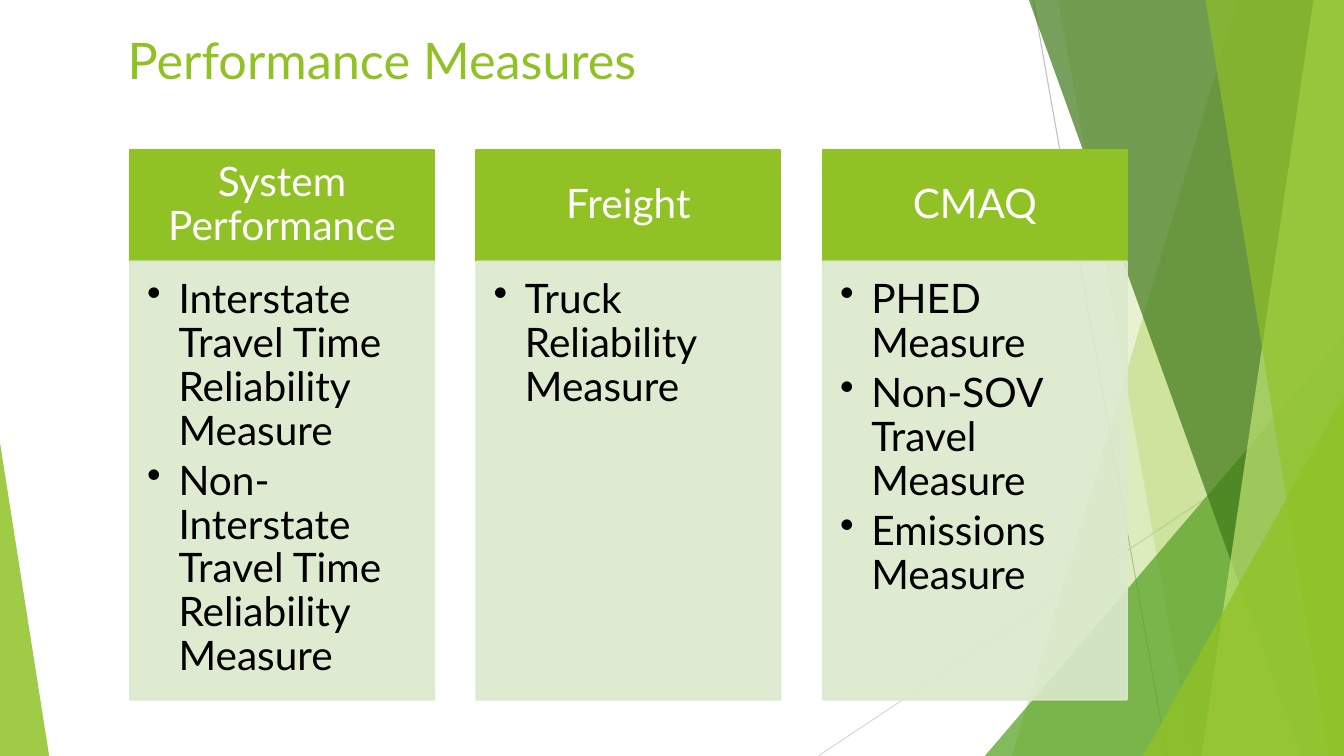
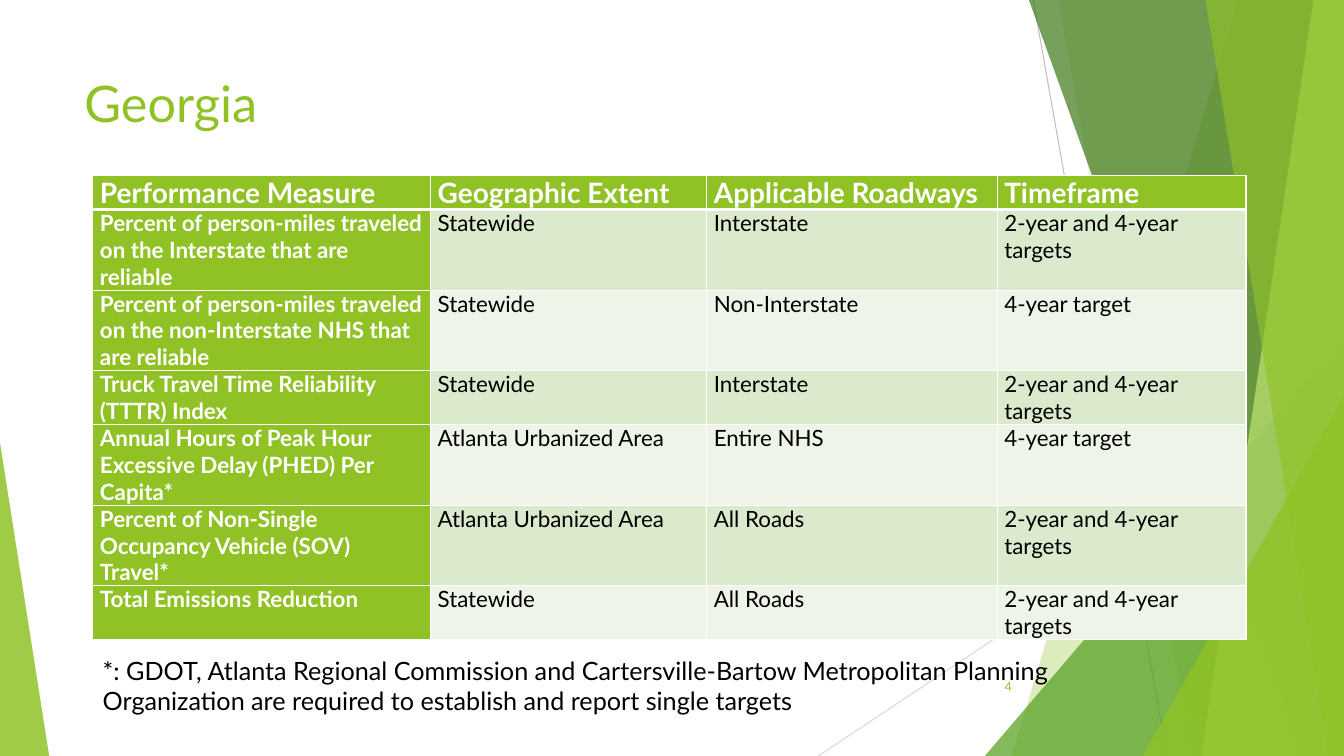
import lxml.etree
import pptx
import pptx.dml.color
import pptx.enum.shapes
import pptx.enum.text
import pptx.oxml
import pptx.oxml.ns
import pptx.util

Cm = pptx.util.Cm
Pt = pptx.util.Pt
RGB = pptx.dml.color.RGBColor
KIND = pptx.enum.shapes.MSO_SHAPE
ANCHOR = pptx.enum.text.MSO_ANCHOR
ALIGN = pptx.enum.text.PP_ALIGN
qn = pptx.oxml.ns.qn

LIME = RGB(0x90, 0xC2, 0x26)
GREEN = RGB(0x54, 0xA0, 0x21)
DARK = RGB(0x3F, 0x78, 0x19)
LIGHT = RGB(0xC0, 0xE4, 0x74)
PALE = RGB(0xDB, 0xE9, 0xCD)
FAINT = RGB(0xEE, 0xF4, 0xE8)
GREY = RGB(0xBF, 0xBF, 0xBF)
SILVER = RGB(0xD9, 0xD9, 0xD9)
WHITE = RGB(0xFF, 0xFF, 0xFF)
BLACK = RGB(0, 0, 0)
FONT = "Lato"
WIDE, HIGH = 33.87, 19.05


def write(frame, text, size=18, color=BLACK, bold=False, align=ALIGN.LEFT,
          anchor=ANCHOR.TOP, inset=(0.25, 0.13, 0.25, 0.13), before=0,
          after=0, line=1.0, bullet=False):
    frame.word_wrap = True
    frame.vertical_anchor = anchor
    sides = ("margin_left", "margin_top", "margin_right", "margin_bottom")
    for side, gap in zip(sides, inset):
        setattr(frame, side, Cm(gap))
    frame.text = text
    for para in frame.paragraphs:
        para.alignment = align
        para.space_before = Pt(before)
        para.space_after = Pt(after)
        para.line_spacing = line
        if bullet:
            props = para._p.get_or_add_pPr()
            props.set("marL", str(Cm(0.79)))
            props.set("indent", str(-Cm(0.79)))
            lxml.etree.SubElement(props, qn("a:buChar")).set("char", "•")
        font = para.runs[0].font
        font.name = FONT
        font.size = Pt(size)
        font.bold = bold
        font.color.rgb = color


def paint(shape, color, alpha=100, edge=0):
    shape.shadow.inherit = False
    fills = [shape.fill]
    if edge:
        shape.line.width = Pt(edge)
        fills.append(shape.line.fill)
    else:
        shape.line.fill.background()
    for fill in fills:
        fill.solid()
        fill.fore_color.rgb = color
    if alpha < 100:
        for tone in shape.element.spPr.iter(qn("a:srgbClr")):
            lxml.etree.SubElement(tone, qn("a:alpha")).set("val", str(alpha * 1000))


deck = pptx.Presentation()
deck.slide_width = Cm(WIDE)
deck.slide_height = Cm(HIGH)
blank = deck.slide_layouts[6]
first = deck.slides.add_slide(blank)

for x1, y1, x2, y2, color in [
    (26.04, 0, 29.41, HIGH, GREY),
    (WIDE, 10.24, 20.62, HIGH, SILVER),
]:
    rule = first.shapes.add_connector(
        pptx.enum.shapes.MSO_CONNECTOR.STRAIGHT, Cm(x1), Cm(y1), Cm(x2), Cm(y2))
    rule.line.color.rgb = color
    rule.line.width = Pt(0.75)
    lxml.etree.SubElement(rule.element.spPr, qn("a:effectLst"))

for form, geo, color, alpha in [
    ("blade", (31.19, 25.5), LIME, 30),
    ("blade", (26.67, 30.05), LIME, 20),
    ("peak", (24.82, 8.46, 9.05, 1), GREEN, 72),
    ("blade", (25.93, 32.79), DARK, 70),
    ("blade", (33.1, 30.28), LIGHT, 70),
    ("blade", (30.38, 33.48), LIME, 65),
    ("peak", (28.8, 9.98, 5.07, 1), LIME, 80),
    ("peak", (0, 11.15, 1.24, 0), LIME, 85),
]:
    if form == "blade":
        top, foot = geo
        pen = first.shapes.build_freeform(Cm(top), 0)
        pen.add_line_segments(
            [(Cm(WIDE), 0), (Cm(WIDE), Cm(HIGH)), (Cm(foot), Cm(HIGH))])
        facet = pen.convert_to_shape()
    else:
        left, top, width, tip = geo
        facet = first.shapes.add_shape(
            KIND.ISOSCELES_TRIANGLE, Cm(left), Cm(top), Cm(width), Cm(HIGH - top))
        facet.adjustments[0] = tip
    paint(facet, color, alpha)

for shape in list(first.shapes):
    blank.shapes.element.append(shape.element)

second = deck.slides.add_slide(blank)

for slide, text, left, top in [
    (first, "Performance Measures", 2.97, 0.61),
    (second, "Georgia", 1.88, 1.7),
]:
    title = slide.shapes.add_textbox(Cm(left), Cm(top), Cm(24), Cm(3.4))
    write(title.text_frame, text, size=36, color=LIME)

cards = [
    ("System Performance", [
        "Interstate Travel Time Reliability Measure",
        "Non-Interstate Travel Time Reliability Measure"]),
    ("Freight", ["Truck Reliability Measure"]),
    ("CMAQ", ["PHED Measure", "Non-SOV Travel Measure", "Emissions Measure"]),
]
for i, (name, items) in enumerate(cards):
    left = Cm(3.28 + i * 8.73)
    head = first.shapes.add_shape(KIND.RECTANGLE, left, Cm(3.78), Cm(7.66), Cm(2.81))
    paint(head, LIME, edge=1.5)
    write(head.text_frame, name, size=29, color=WHITE, align=ALIGN.CENTER,
          anchor=ANCHOR.MIDDLE, inset=(0.58, 0.33, 0.58, 0.33), line=0.9)
    body = first.shapes.add_shape(KIND.RECTANGLE, left, Cm(6.59), Cm(7.66), Cm(11.04))
    paint(body, PALE, 90, edge=1.5)
    write(body.text_frame, "\n".join(items), size=29,
          inset=(0.43, 0.43, 0.58, 0.64), after=4.4, line=0.9, bullet=True)

number = second.shapes.add_textbox(Cm(23.85), Cm(16.79), Cm(1.9), Cm(1.02))
write(number.text_frame, "4", size=9, color=LIME, align=ALIGN.RIGHT,
      anchor=ANCHOR.MIDDLE)

rows = [
    ("Performance Measure", "Geographic Extent", "Applicable Roadways", "Timeframe"),
    ("Percent of person-miles traveled on the Interstate that are reliable",
     "Statewide", "Interstate", "2-year and 4-year targets"),
    ("Percent of person-miles traveled on the non-Interstate NHS that are reliable",
     "Statewide", "Non-Interstate", "4-year target"),
    ("Truck Travel Time Reliability (TTTR) Index",
     "Statewide", "Interstate", "2-year and 4-year targets"),
    ("Annual Hours of Peak Hour Excessive Delay (PHED) Per Capita*",
     "Atlanta Urbanized Area", "Entire NHS", "4-year target"),
    ("Percent of Non-Single Occupancy Vehicle (SOV) Travel*",
     "Atlanta Urbanized Area", "All Roads", "2-year and 4-year targets"),
    ("Total Emissions Reduction",
     "Statewide", "All Roads", "2-year and 4-year targets"),
]
widths = [8.51, 6.96, 7.32, 6.27]
heights = [0.86, 2.03, 2.03, 1.35, 2.03, 2.03, 1.35]
grid = second.shapes.add_table(
    len(rows), len(widths), Cm(2.34), Cm(4.42), Cm(sum(widths)), Cm(sum(heights))).table
for col, width in zip(grid.columns, widths):
    col.width = Cm(width)
for r, (row, height) in enumerate(zip(rows, heights)):
    grid.rows[r].height = Cm(height)
    for c, text in enumerate(row):
        cell = grid.cell(r, c)
        key = r == 0 or c == 0
        gap = 6 if r == 0 else 3
        write(cell.text_frame, text, size=20 if r == 0 else 16,
              color=WHITE if key else BLACK, bold=key, before=gap, after=gap)
        cell.margin_left = cell.margin_right = Cm(0.18)
        cell.margin_top = cell.margin_bottom = 0
        cell.vertical_anchor = ANCHOR.TOP
        props = cell._tc.get_or_add_tcPr()
        for side in "LRTB":
            thick = (r == 0 and side == "B") or (r == 1 and side == "T")
            edge = lxml.etree.SubElement(props, qn("a:ln" + side))
            edge.set("w", str(Pt(3 if thick else 1)))
            fill = lxml.etree.SubElement(edge, qn("a:solidFill"))
            lxml.etree.SubElement(fill, qn("a:srgbClr")).set("val", str(WHITE))
        cell.fill.solid()
        cell.fill.fore_color.rgb = LIME if key else PALE if r % 2 else FAINT

note = second.shapes.add_textbox(Cm(2.34), Cm(16.38), Cm(25.15), Cm(1.8))
write(note.text_frame,
      "*: GDOT, Atlanta Regional Commission and Cartersville-Bartow Metropolitan "
      "Planning Organization are required to establish and report single targets",
      anchor=ANCHOR.MIDDLE)

deck.save("out.pptx")
